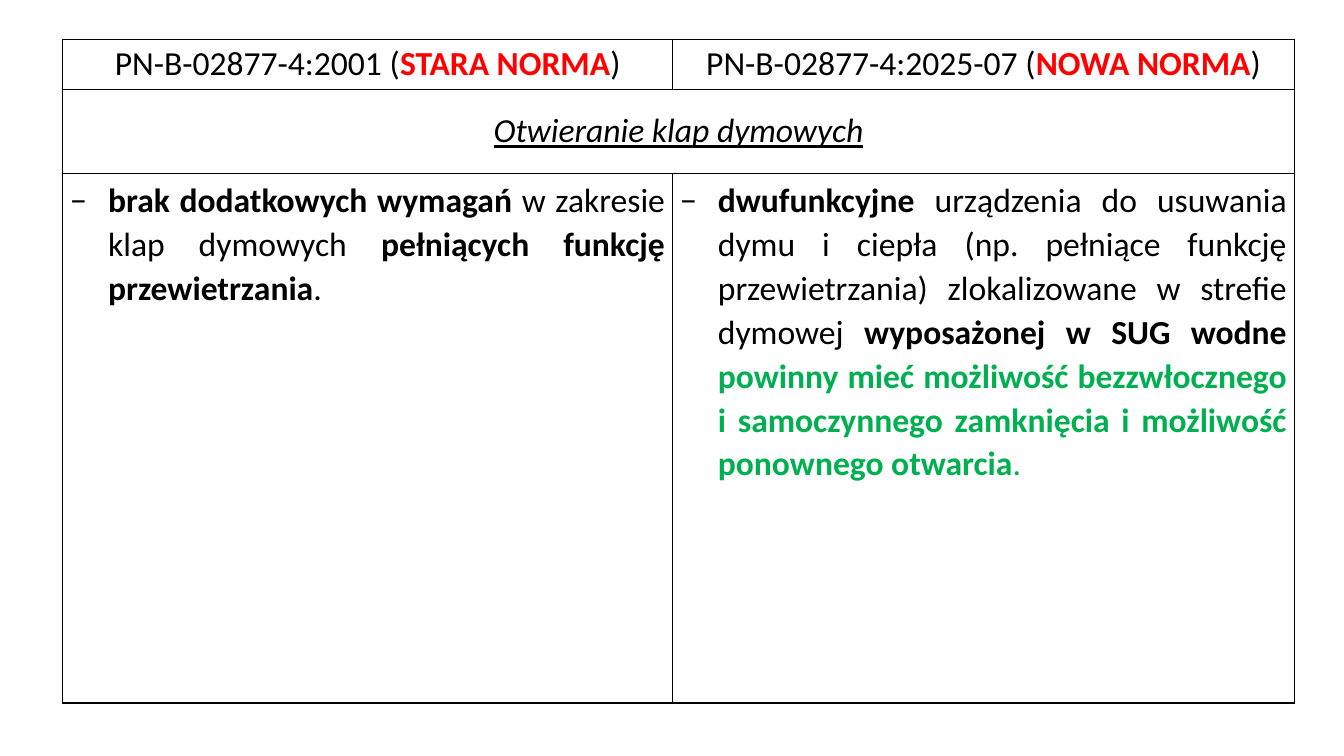
from lxml.etree import SubElement
from pptx import Presentation
from pptx.dml.color import RGBColor
from pptx.enum.text import MSO_ANCHOR as Anchor, PP_ALIGN as Align
from pptx.oxml.ns import qn
from pptx.util import Pt

COLORS = {"black": "000000", "red": "FF0000", "green": "00B050"}
COLUMN_WIDTHS = (435.6, 444.2)
ROW_HEIGHTS = (35.3, 60.5, 378)
HEADERS = (("PN-B-02877-4:2001 (", "STARA NORMA"),
           ("PN-B-02877-4:2025-07 (", "NOWA NORMA"))
BOLD = {"bold": True}
GREEN = {"bold": True, "color": "green"}
REQUIREMENTS = (
    (("brak dodatkowych wymagań", BOLD),
     (" w zakresie klap dymowych ", {}),
     ("pełniących funkcję przewietrzania", BOLD),
     (".", {})),
    (("dwufunkcyjne", BOLD),
     (" urządzenia do usuwania dymu i ciepła (np. pełniące funkcję przewietrzania) "
      "zlokalizowane w strefie dymowej ", {}),
     ("wyposażonej w SUG wodne ", BOLD),
     ("powinny mieć możliwość bezzwłocznego i samoczynnego zamknięcia "
      "i możliwość ponownego otwarcia", GREEN),
     (".", {"color": "green"})),
)


def add_text(paragraph, text, color="black", bold=False, italic=False, underline=False):
    """Append one formatted run to the paragraph."""
    run = paragraph.add_run()
    run.text = text
    font = run.font
    font.name, font.size = "Calibri", Pt(24)
    font.bold, font.italic, font.underline = bold, italic, underline
    font.color.rgb = RGBColor.from_string(COLORS[color])


def style_cell(cell):
    """Clear the fill, set the margins and draw the four borders."""
    cell.margin_left = cell.margin_right = Pt(5.4)
    cell.margin_top = cell.margin_bottom = Pt(3)
    properties = cell._tc.get_or_add_tcPr()
    for side in ("a:lnL", "a:lnR", "a:lnT", "a:lnB"):
        line = SubElement(properties, qn(side), w=str(Pt(1)))
        fill = SubElement(line, qn("a:solidFill"))
        SubElement(fill, qn("a:srgbClr"), val=COLORS["black"])
    cell.fill.background()


def fill_centered(cell, parts):
    """Write the runs in the middle of the cell."""
    cell.vertical_anchor = Anchor.MIDDLE
    paragraph = cell.text_frame.paragraphs[0]
    paragraph.alignment = Align.CENTER
    for text, style in parts:
        add_text(paragraph, text, **style)


def fill_bulleted(cell, parts):
    """Write the runs as one justified item with a dash."""
    cell.vertical_anchor = Anchor.TOP
    paragraph = cell.text_frame.paragraphs[0]
    paragraph.alignment = Align.JUSTIFY
    paragraph.line_spacing = 1.07
    properties = paragraph._p.get_or_add_pPr()
    properties.set("marL", str(Pt(27)))
    properties.set("indent", str(Pt(-27)))
    SubElement(properties, qn("a:buFont"), typeface="Calibri")
    SubElement(properties, qn("a:buChar"), char="−")
    for text, style in parts:
        add_text(paragraph, text, **style)


def add_grid(slide):
    """Add the plain bordered table and return it."""
    frame = slide.shapes.add_table(len(ROW_HEIGHTS), len(COLUMN_WIDTHS), Pt(44.8), Pt(28.4),
                                   Pt(sum(COLUMN_WIDTHS)), Pt(sum(ROW_HEIGHTS)))
    table = frame.table
    table.first_row = table.horz_banding = False
    for column, width in zip(table.columns, COLUMN_WIDTHS):
        column.width = Pt(width)
    for row, height in zip(table.rows, ROW_HEIGHTS):
        row.height = Pt(height)
    for cell in table.iter_cells():
        style_cell(cell)
    return table


def main():
    """Build the comparison slide and save it."""
    presentation = Presentation()
    presentation.slide_width, presentation.slide_height = Pt(960), Pt(540)
    slide = presentation.slides.add_slide(presentation.slide_layouts[6])
    table = add_grid(slide)
    for index, (standard, status) in enumerate(HEADERS):
        fill_centered(table.cell(0, index),
                      ((standard, {}), (status, {"bold": True, "color": "red"}), (")", {})))
    topic = table.cell(1, 0)
    topic.merge(table.cell(1, 1))
    fill_centered(topic, [("Otwieranie klap dymowych", {"italic": True, "underline": True})])
    for index, parts in enumerate(REQUIREMENTS):
        fill_bulleted(table.cell(2, index), parts)
    presentation.save("out.pptx")


if __name__ == "__main__":
    main()
